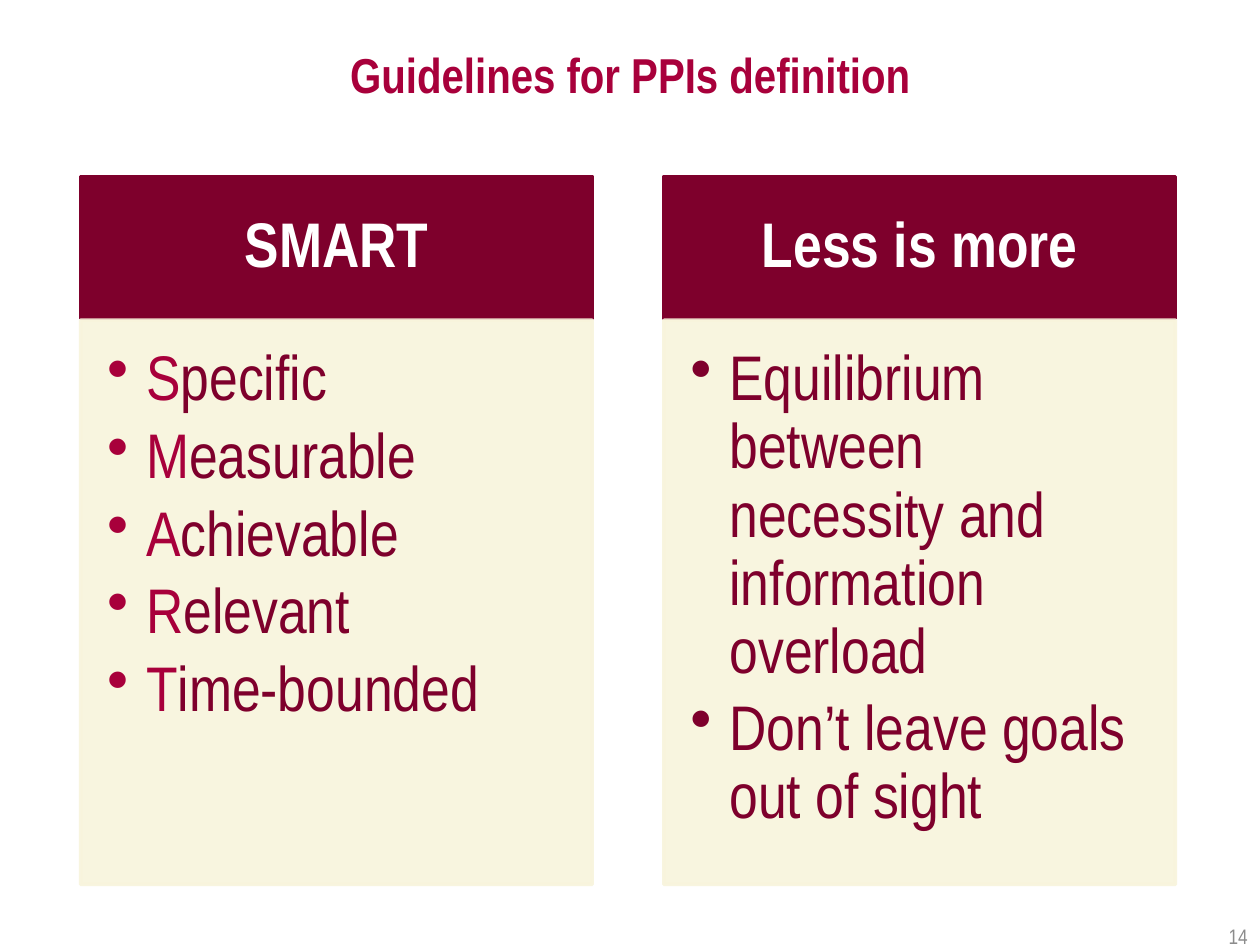
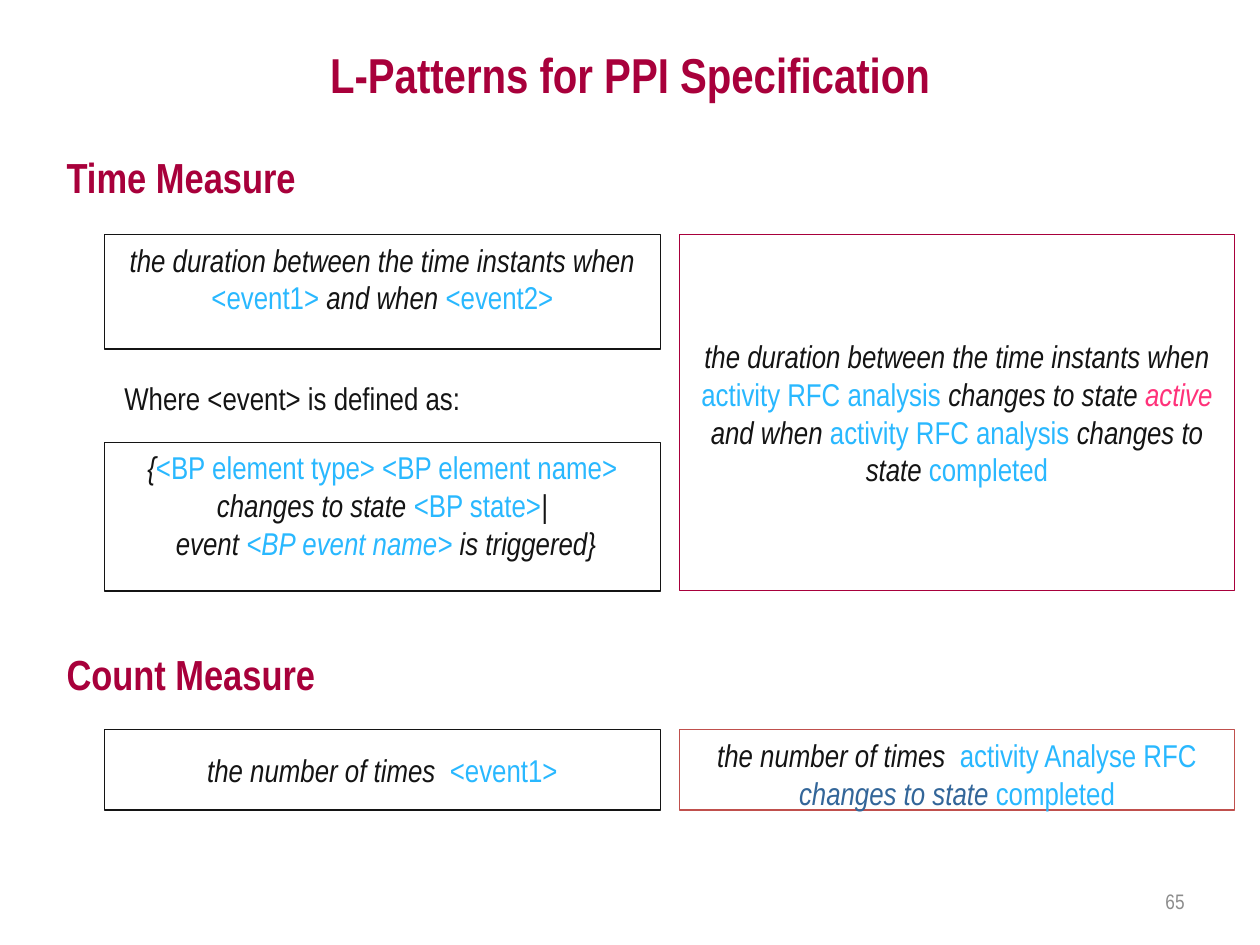
from pptx import Presentation
from pptx.dml.color import RGBColor
from pptx.enum.shapes import MSO_SHAPE
from pptx.enum.text import MSO_ANCHOR as Anchor, PP_ALIGN as Align
from pptx.oxml.ns import qn
from pptx.oxml.xmlchemy import OxmlElement
from pptx.util import Inches, Pt

FONT = "Arial Narrow"
CRIMSON, WINE, CREAM, WHITE = "A8003B", "7E002C", "F8F4DC", "FFFFFF"
BLACK, GREY, SKY, PINK, STEEL = "141414", "8C8C8C", "29B8FF", "FF327A", "336699"
BRICK = "C0504D"


def write(shape, paragraphs, size, align, anchor=Anchor.MIDDLE, bold=False):
    """Fill a shape with paragraphs, each a list of (text, colour, italic) runs."""
    frame = shape.text_frame
    frame.word_wrap = True
    frame.vertical_anchor = anchor
    for index, runs in enumerate(paragraphs):
        paragraph = frame.paragraphs[0] if index == 0 else frame.add_paragraph()
        paragraph.alignment = align
        for text, colour, italic in runs:
            run = paragraph.add_run()
            run.text = text
            run.font.name, run.font.size = FONT, Pt(size)
            run.font.bold, run.font.italic = bold, italic
            run.font.color.rgb = RGBColor.from_string(colour)


def add_box(slide, place, line, line_width, fill=None, opacity=100):
    """Add a rectangle; an opacity below 100 applies to its fill and line."""
    box = slide.shapes.add_shape(MSO_SHAPE.RECTANGLE, *map(Inches, place))
    box.shadow.inherit = False
    box.line.color.rgb = RGBColor.from_string(line)
    box.line.width = Pt(line_width)
    if fill:
        box.fill.solid()
        box.fill.fore_color.rgb = RGBColor.from_string(fill)
    else:
        box.fill.background()
    if opacity < 100:
        for colour in box._element.spPr.iter(qn("a:srgbClr")):
            alpha = OxmlElement("a:alpha")
            alpha.set("val", str(opacity * 1000))
            colour.append(alpha)
    return box


presentation = Presentation()
presentation.slide_width, presentation.slide_height = Inches(10), Inches(7.5)

# Titles and page numbers
slides = []
for title_text, number, number_place in [
    ("Guidelines for PPIs definition", "14", (8.69, 7.17, 1.31, 0.52)),
    ("L-Patterns for PPI Specification", "65", (7.17, 6.95, 2.33, 0.4)),
]:
    slide = presentation.slides.add_slide(presentation.slide_layouts[5])
    title = slide.shapes.title
    title.left, title.top = Inches(0.5), Inches(0.3)
    title.width, title.height = Inches(9), Inches(0.57)
    write(title, [[(title_text, CRIMSON, False)]], 28, Align.CENTER, bold=True)
    page_number = slide.shapes.add_textbox(*map(Inches, number_place))
    write(page_number, [[(number, GREY, False)]], 12, Align.RIGHT)
    slides.append(slide)
guidelines, patterns = slides

# Guidelines: two columns, each a header over a bullet panel
smart_words = ["Specific", "Measurable", "Achievable", "Relevant", "Time-bounded"]
smart = [[(word[0], CRIMSON, False), (word[1:], WINE, False)] for word in smart_words]
less = [
    [("Equilibrium between necessity and information overload", WINE, False)],
    [("Don’t leave goals out of sight", WINE, False)],
]
for left, heading, bullets in [(0.64, "SMART", smart), (5.27, "Less is more", less)]:
    header = add_box(guidelines, (left, 1.4, 4.06, 1.13), WINE, 2, WINE)
    write(header, [[(heading, WHITE, False)]], 36, Align.CENTER, bold=True)
    header.text_frame.paragraphs[0].line_spacing = 0.9

    panel = add_box(guidelines, (left, 2.54, 4.06, 4.48), CREAM, 2, CREAM, 90)
    write(panel, bullets, 36, Align.LEFT, Anchor.TOP)
    frame = panel.text_frame
    frame.margin_left = frame.margin_top = Inches(0.21)
    frame.margin_right, frame.margin_bottom = Inches(0.28), Inches(0.32)
    for paragraph in frame.paragraphs:
        paragraph.line_spacing = 0.9
        paragraph.space_after = Pt(5.5)
        properties = paragraph._p.get_or_add_pPr()
        properties.set("marL", str(Inches(0.31)))
        properties.set("indent", str(-Inches(0.31)))
        bullet = OxmlElement("a:buChar")
        bullet.set("char", "•")
        properties.append(bullet)

# Patterns: section headings and the linking sentence
for top, heading in [(1.15, "Time Measure"), (5.09, "Count Measure")]:
    section = patterns.shapes.add_textbox(*map(Inches, (0.43, top, 2.83, 0.51)))
    write(section, [[(heading, CRIMSON, False)]], 24, Align.LEFT, bold=True)
where = patterns.shapes.add_textbox(*map(Inches, (0.43, 2.96, 3.78, 0.37)))
write(where, [[("Where <event> is defined as:", BLACK, False)]], 18, Align.CENTER, Anchor.TOP)

# Patterns: templates on the left, examples on the right
TEMPLATE_LEFT, EXAMPLE_LEFT, BOX_WIDTH = 0.83, 5.39, 4.41
duration = ("the duration between the time instants when ", BLACK, True)
changes = ("changes to state ", BLACK, True)
times = ("the number of times  ", BLACK, True)
analysis = ("activity RFC analysis ", SKY, False)
completed = ("completed", SKY, False)

for left, top, height, line, anchor, paragraphs in [
    (TEMPLATE_LEFT, 1.86, 0.91, BLACK, Anchor.TOP, [
        [duration, ("<event1> ", SKY, False), ("and when ", BLACK, True),
         ("<event2>", SKY, False)]]),
    (EXAMPLE_LEFT, 1.86, 2.83, CRIMSON, Anchor.MIDDLE, [
        [duration, analysis, changes, ("active", PINK, True),
         (" and when ", BLACK, True), analysis, changes, completed]]),
    (TEMPLATE_LEFT, 3.51, 1.18, BLACK, Anchor.TOP, [
        [("{", BLACK, True), ("<BP element type> <BP element name> ", SKY, False),
         changes, ("<BP state>", SKY, False), ("|", BLACK, True)],
        [(" event ", BLACK, True), ("<BP event name> ", SKY, True),
         ("is triggered}", BLACK, True)]]),
    (TEMPLATE_LEFT, 5.79, 0.64, BLACK, Anchor.MIDDLE, [
        [times, ("<event1>", SKY, False)]]),
    (EXAMPLE_LEFT, 5.79, 0.64, BRICK, Anchor.TOP, [
        [times, ("activity Analyse RFC ", SKY, False),
         ("changes to state ", STEEL, True), completed]]),
]:
    box = add_box(patterns, (left, top, BOX_WIDTH, height), line, 0.75)
    write(box, paragraphs, 18, Align.CENTER, anchor)

presentation.save("out.pptx")
